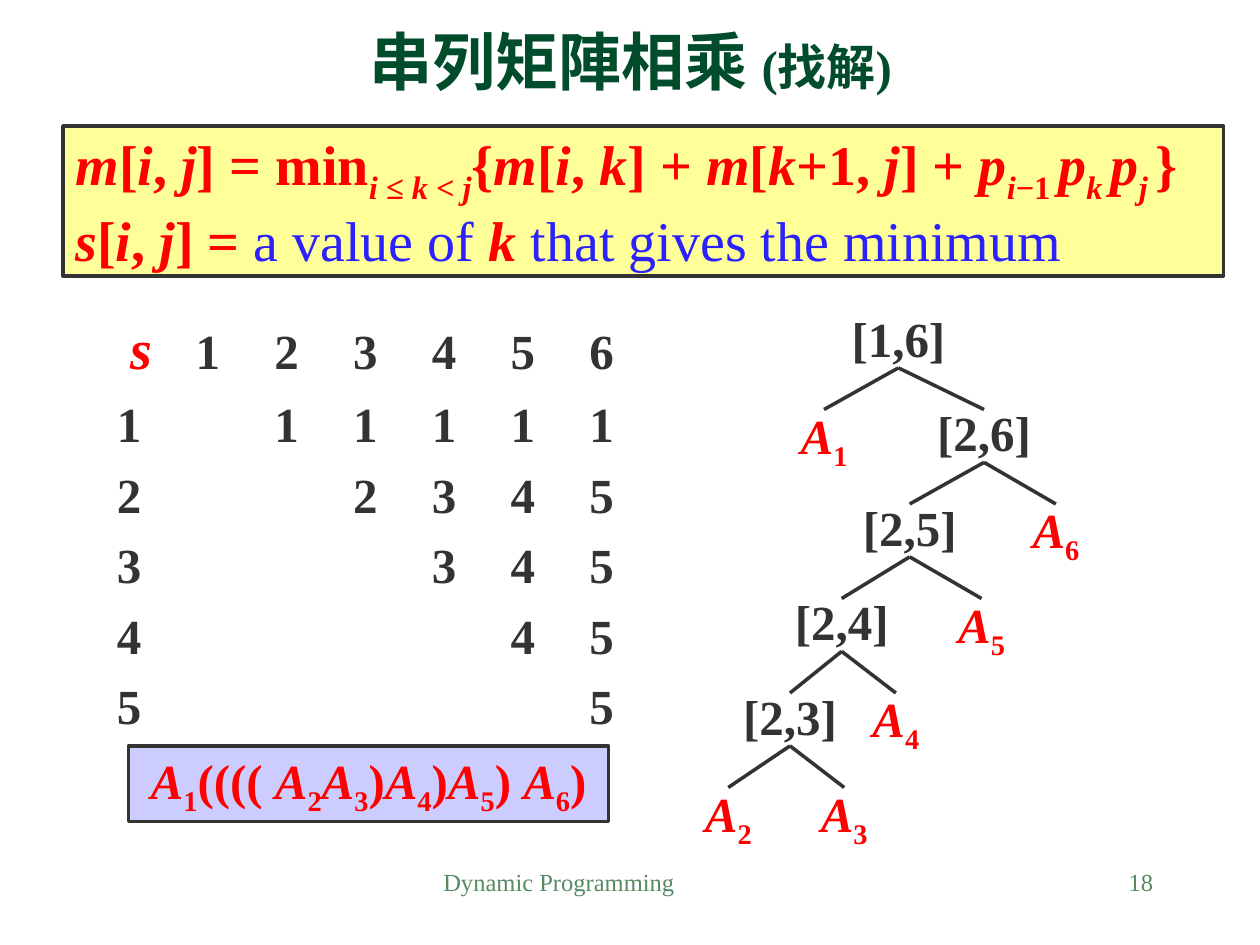
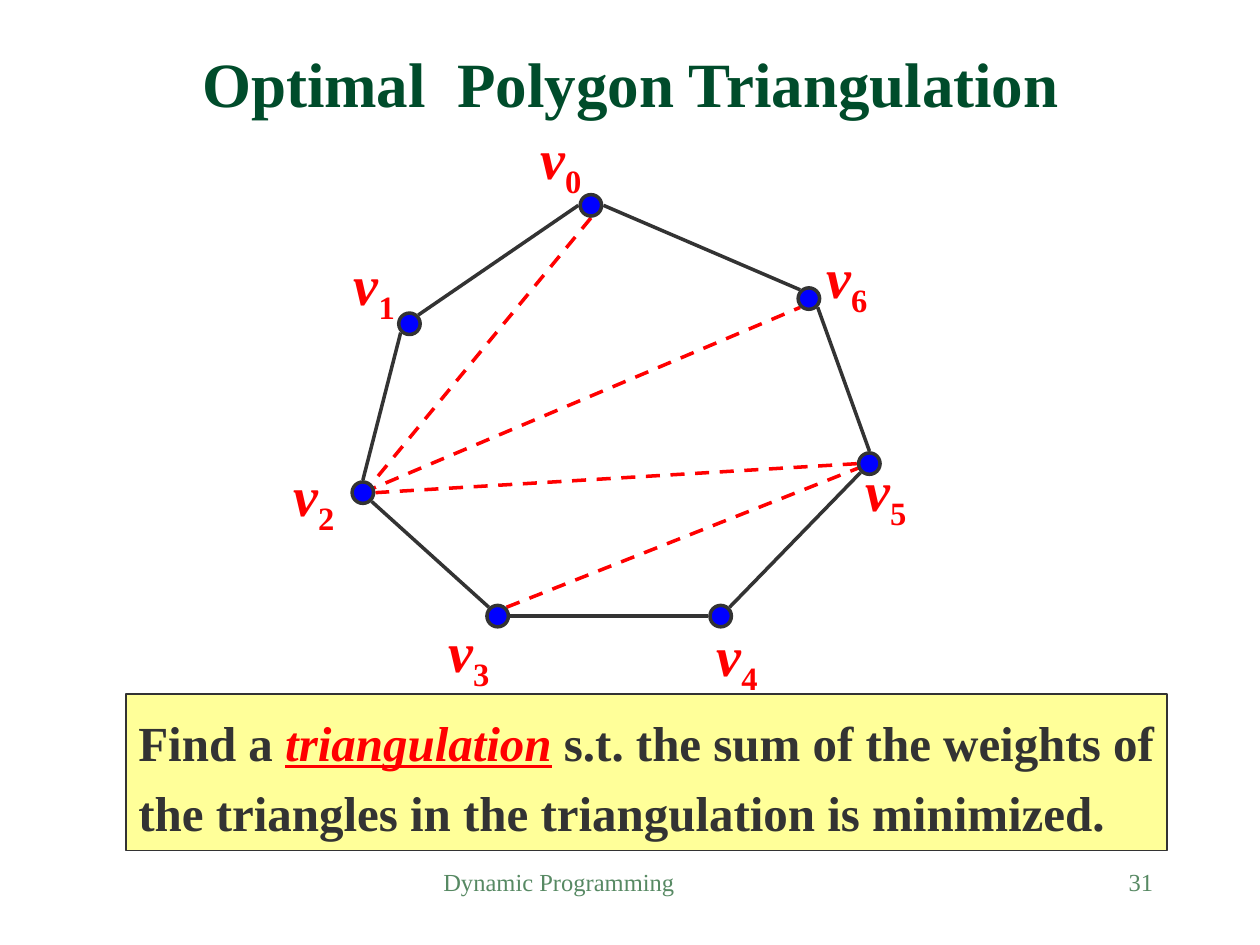
from dataclasses import dataclass, replace
from typing import NamedTuple

from lxml.etree import SubElement
from pptx import Presentation
from pptx.dml.color import RGBColor
from pptx.enum.dml import MSO_LINE
from pptx.enum.shapes import MSO_CONNECTOR, MSO_SHAPE
from pptx.enum.text import MSO_ANCHOR, MSO_AUTO_SIZE, PP_ALIGN
from pptx.oxml.ns import qn
from pptx.util import Inches, Pt


# Theme: colours, type sizes and line widths
@dataclass(frozen=True)
class Theme:
    font: str = "Times New Roman"
    green: str = "004C2B"
    pale: str = "578963"
    dark: str = "333333"
    red: str = "FF0000"
    blue: str = "2B21FD"
    dot: str = "0000FF"
    yellow: str = "FFFF99"
    lilac: str = "CCCCFF"
    title: int = 36
    large: int = 32
    body: int = 28
    small: int = 14
    thin: int = 1
    thick: int = 2


T = Theme()


class Box(NamedTuple):
    left: float
    top: float
    width: float
    height: float


class Point(NamedTuple):
    x: float
    y: float


class Look(NamedTuple):
    """What a stretch between # marks changes."""
    color: str | None = None
    size: int | None = None
    bold: bool | None = None
    under: bool | None = None


@dataclass(frozen=True)
class Style:
    size: int
    color: str
    bold: bool = True
    align: PP_ALIGN = PP_ALIGN.LEFT
    anchor: MSO_ANCHOR = MSO_ANCHOR.TOP
    space: float | None = None
    before: int = 0
    pad: tuple[float, float] = (0.1, 0.05)
    wrap: bool = True
    grow: bool = True
    alt: Look = Look()


class Panel(NamedTuple):
    fill: str
    line: int


TITLE = Style(T.title, T.green, align=PP_ALIGN.CENTER, anchor=MSO_ANCHOR.BOTTOM,
              grow=False, alt=Look(size=T.body))
FOOT = Style(T.small, T.pale, bold=False, grow=False)
RULE = Style(T.large, T.red, anchor=MSO_ANCHOR.MIDDLE, wrap=False,
             alt=Look(T.blue, bold=False))
GRID = Style(T.body, T.dark, space=1.2, alt=Look(T.red, T.large))
NODE = Style(T.body, T.dark, align=PP_ALIGN.CENTER, anchor=MSO_ANCHOR.MIDDLE,
             space=0.9, pad=(0.1, 0), wrap=False)
LEAF = replace(NODE, color=T.red)
ANSWER = replace(LEAF, space=None, pad=(0.1, 0.05))
GOAL = Style(T.body, T.dark, space=1.2, before=8, alt=Look(T.red, under=True))
MARK = Style(T.large, T.red, align=PP_ALIGN.CENTER, space=0.8, pad=(0, 0), wrap=False)


# Text: ~ switches italic, ^ switches subscript, # switches the other look
def add_runs(para, text: str, alt: Look) -> None:
    state = dict.fromkeys("~^#", False)
    part = ""

    def flush() -> None:
        if not part:
            return
        run = para.add_run()
        run.text = part
        run.font.italic = state["~"] or None
        if state["^"]:
            run._r.get_or_add_rPr().set("baseline", "-25000")
        if state["#"]:
            run.font.bold, run.font.underline = alt.bold, alt.under
            if alt.size:
                run.font.size = Pt(alt.size)
            if alt.color:
                run.font.color.rgb = RGBColor.from_string(alt.color)

    for char in text:
        if char in state:
            flush()
            part = ""
            state[char] = not state[char]
        else:
            part += char
    flush()


def add_text(slide, box: Box, lines: list[str], style: Style, panel: Panel | None = None):
    spot = [Inches(n) for n in box]
    if panel:
        shape = slide.shapes.add_shape(MSO_SHAPE.RECTANGLE, *spot)
        paint(shape, panel.fill, panel.line)
    else:
        shape = slide.shapes.add_textbox(*spot)
    frame = shape.text_frame
    frame.word_wrap = style.wrap
    frame.auto_size = MSO_AUTO_SIZE.SHAPE_TO_FIT_TEXT if style.grow else MSO_AUTO_SIZE.NONE
    frame.vertical_anchor = style.anchor
    frame.margin_left = frame.margin_right = Inches(style.pad[0])
    frame.margin_top = frame.margin_bottom = Inches(style.pad[1])
    for i, line in enumerate(lines):
        para = frame.add_paragraph() if i else frame.paragraphs[0]
        para.alignment = style.align
        para.line_spacing = style.space
        para.space_before = Pt(style.before)
        font = para.font
        font.name, font.size, font.bold = T.font, Pt(style.size), style.bold
        font.color.rgb = RGBColor.from_string(style.color)
        add_runs(para, line, style.alt)
    return shape


# Shapes and lines
def paint(shape, fill: str, line: int) -> None:
    shape.shadow.inherit = False
    shape.fill.solid()
    shape.fill.fore_color.rgb = RGBColor.from_string(fill)
    shape.line.color.rgb = RGBColor.from_string(T.dark)
    shape.line.width = Pt(line)


def add_line(slide, start: Point, end: Point, color: str = T.dark, dash: bool = False):
    line = slide.shapes.add_connector(
        MSO_CONNECTOR.STRAIGHT, *(Inches(n) for n in (*start, *end)))
    line.line.color.rgb = RGBColor.from_string(color)
    line.line.width = Pt(T.thick)
    if dash:
        line.line.dash_style = MSO_LINE.DASH
    SubElement(line._element.spPr, qn("a:effectLst"))
    return line


def add_slide(deck, title: str, top: float, page: int):
    slide = deck.slides.add_slide(deck.slide_layouts[6])
    add_text(slide, Box(3.42, 6.83, 3.17, 0.5), ["Dynamic Programming"], FOOT)
    add_text(slide, Box(7.17, 6.83, 2.08, 0.5), [str(page)],
             replace(FOOT, align=PP_ALIGN.RIGHT))
    add_text(slide, Box(0.67, top, 8.67, 0.58), [title], TITLE)
    return slide


# Tree of index ranges and matrices
class Node(NamedTuple):
    text: str
    mid: float
    kids: tuple["Node", ...] = ()


def leaf(index: int, mid: float) -> Node:
    return Node(f"~A~^{index}^", mid)


TREE = Node("[1,6]", 7.13, (
    leaf(1, 6.54),
    Node("[2,6]", 7.81, (
        Node("[2,5]", 7.22, (
            Node("[2,4]", 6.68, (
                Node("[2,3]", 6.27, (leaf(2, 5.78), leaf(3, 6.7))),
                leaf(4, 7.11))),
            leaf(5, 7.79))),
        leaf(6, 8.38)))))


def add_tree(slide, node: Node, level: int = 0):
    width, style = (0.95, NODE) if node.kids else (0.59, LEAF)
    box = Box(node.mid - width / 2, 2.5 + 0.75 * level, width, 0.42)
    shape = add_text(slide, box, [node.text], style)
    for kid in node.kids:
        child = add_tree(slide, kid, level + 1)
        line = add_line(slide, Point(0, 0), Point(1, 1))
        line.begin_connect(shape, 2)
        line.end_connect(child, 0)
    return shape


# Table of split points, set on tab stops
def add_grid(slide) -> None:
    count = 6
    rows = ["#~ s~#\t" + "\t".join(str(n) for n in range(1, count + 1))]
    for row in range(1, count):
        cells = [1] * (count - 1) if row == 1 else range(row, count)
        rows.append(str(row) + "\t" * (row + 1) + "\t".join(map(str, cells)))
    shape = add_text(slide, Box(0.83, 2.5, 4.27, 3.38), rows, GRID)
    paras = shape.text_frame.paragraphs
    paras[0].line_spacing = 0.9
    for para in paras:
        props = para._p.get_or_add_pPr()
        tabs = props.makeelement(qn("a:tabLst"), {})
        props.find(qn("a:defRPr")).addprevious(tabs)
        for n in range(1, count + 1):
            SubElement(tabs, qn("a:tab"), pos=str(Inches(0.625 * n)), algn="l")


def chain_slide(deck) -> None:
    slide = add_slide(deck, "串列矩陣相乘 #(找解)#", 0.25, 18)
    add_text(slide, Box(0.5, 1, 9.21, 1.19), [
        "~m~[~i~, ~j~] = min^~i ~≤ ~k ~< ~j~^{~m~[~i~, ~k~] + ~m~[~k~+1, ~j~] + "
        "~p^i~−1 ^~p^k ^p^j ^~}",
        "~s~[~i~, ~j~] = #a value of #~k ~#that gives the minimum#",
    ], RULE, Panel(T.yellow, T.thick))
    add_grid(slide)
    add_tree(slide, TREE)
    add_text(slide, Box(1.02, 5.92, 3.81, 0.6), [
        "~A~^1^(((( ~A~^2^~A~^3^)~A~^4^)~A~^5^) ~A~^6^)",
    ], ANSWER, Panel(T.lilac, T.thick))


# Polygon: corners with their labels, and lines between points on the dots' rims
class Corner(NamedTuple):
    mid: Point
    label: Point


class Edge(NamedTuple):
    start: int
    exit: str
    end: int
    entry: str


CORNERS = [
    Corner(Point(4.69, 1.63), Point(4.28, 1.04)),
    Corner(Point(3.25, 2.57), Point(2.8, 2.04)),
    Corner(Point(2.88, 3.91), Point(2.32, 3.71)),
    Corner(Point(3.95, 4.89), Point(3.55, 4.95)),
    Corner(Point(5.72, 4.89), Point(5.68, 4.98)),
    Corner(Point(6.9, 3.68), Point(6.86, 3.67)),
    Corner(Point(6.42, 2.37), Point(6.55, 1.98)),
]
SIDES = [Edge(0, "w", 1, "ne"), Edge(1, "sw", 2, "n"), Edge(2, "se", 3, "nw"),
         Edge(3, "e", 4, "w"), Edge(4, "ne", 5, "sw"), Edge(5, "n", 6, "se"),
         Edge(6, "nw", 0, "e")]
CHORDS = [Edge(2, "", 6, "sw"), Edge(3, "ne", 5, ""), Edge(5, "w", 2, "e"),
          Edge(0, "s", 2, "ne")]


def rim(corner: int, side: str) -> Point:
    mid = CORNERS[corner].mid
    reach = 0.07 if len(side) == 2 else 0.1
    return Point(mid.x + reach * (("e" in side) - ("w" in side)),
                 mid.y + reach * (("s" in side) - ("n" in side)))


def polygon_slide(deck) -> None:
    slide = add_slide(deck, "Optimal  Polygon Triangulation", 0.42, 31)
    add_text(slide, Box(1, 5.51, 8.26, 1.24), [
        "Find a #~triangulation~# s.t. the sum of the weights of the triangles "
        "in the triangulation is minimized.",
    ], GOAL, Panel(T.yellow, T.thin))
    for edge in CHORDS:
        add_line(slide, rim(edge.start, edge.exit), rim(edge.end, edge.entry), T.red, True)
    for edge in SIDES:
        add_line(slide, rim(edge.start, edge.exit), rim(edge.end, edge.entry))
    size = 0.17
    for i, (mid, label) in enumerate(CORNERS):
        spot = Box(mid.x - size / 2, mid.y - size / 2, size, size)
        dot = slide.shapes.add_shape(MSO_SHAPE.OVAL, *(Inches(n) for n in spot))
        paint(dot, T.dot, T.thick)
        add_text(slide, Box(*label, 0.34, 0.43), [f"~v~^{i}^"], MARK)


def main() -> None:
    deck = Presentation()
    deck.slide_width, deck.slide_height = Inches(10), Inches(7.5)
    chain_slide(deck)
    polygon_slide(deck)
    deck.save("out.pptx")


if __name__ == "__main__":
    main()
